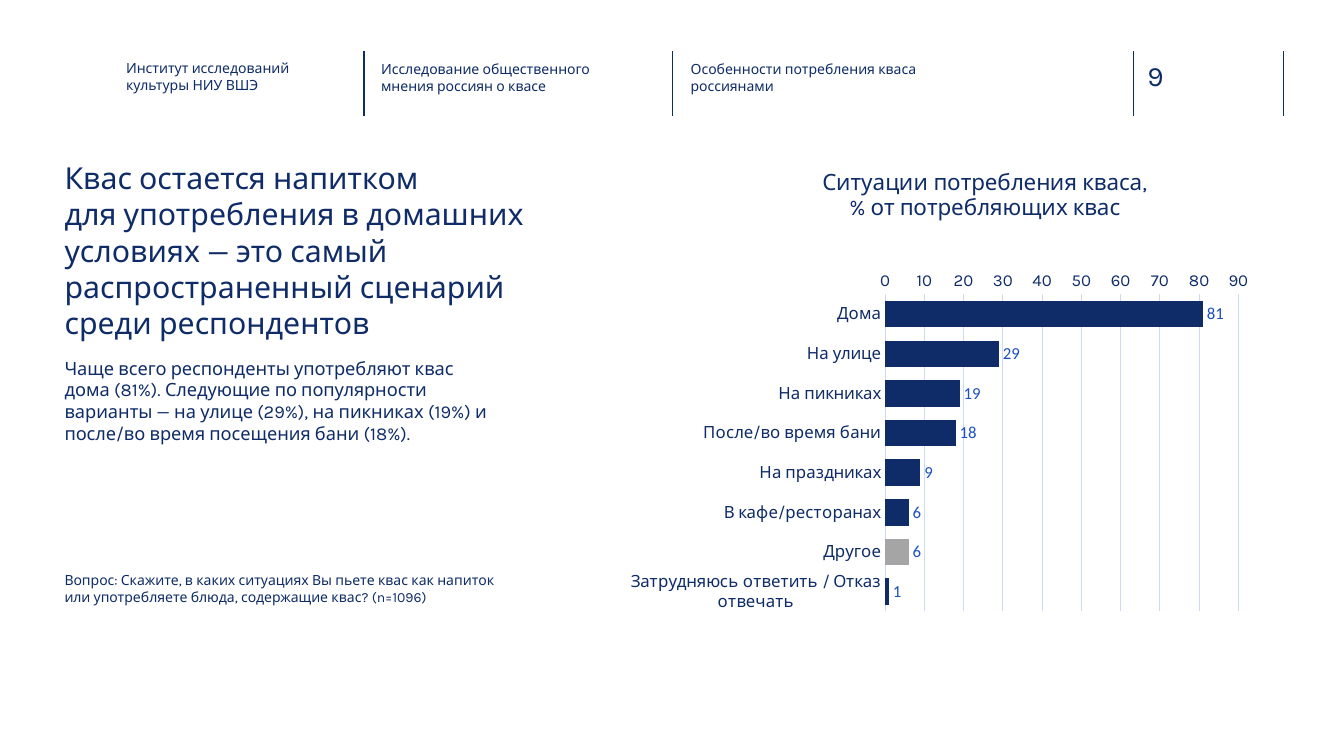
from lxml import etree
from pptx import Presentation
from pptx.chart.data import CategoryChartData
from pptx.dml.color import RGBColor
from pptx.enum.chart import XL_CHART_TYPE, XL_LABEL_POSITION, XL_TICK_MARK
from pptx.enum.shapes import MSO_CONNECTOR
from pptx.enum.text import MSO_ANCHOR, MSO_AUTO_SIZE, PP_ALIGN
from pptx.oxml.ns import qn
from pptx.util import Inches, Pt

NAVY = RGBColor(0x0F, 0x2C, 0x68)
BLUE = RGBColor(0x1B, 0x50, 0xBD)
PALE = RGBColor(0xCC, 0xDA, 0xF8)
GREY = RGBColor(0xA5, 0xA5, 0xA5)

HEADERS = [
    (1.25, 0.59, 2.08, "Институт исследований культуры НИУ ВШЭ"),
    (3.78, 0.6, 2.26, "Исследование общественного мнения россиян о квасе"),
    (6.85, 0.6, 2.26, "Особенности потребления кваса россиянами"),
]
TITLE = ("Квас остается напитком\vдля употребления в домашних условиях — "
         "это самый распространенный сценарий среди респондентов")
BODY = ("Чаще всего респонденты употребляют квас дома (81%). "
        "Следующие по популярности варианты — на улице (29%), "
        "на пикниках (19%) и после/во время посещения бани (18%).")
QUESTION = ("Вопрос: Скажите, в каких ситуациях Вы пьете квас как напиток "
            "или употребляете блюда, содержащие квас? (n=1096)")
SITUATIONS = {
    "Дома": 81,
    "На улице": 29,
    "На пикниках": 19,
    "После/во время бани": 18,
    "На праздниках": 9,
    "В кафе/ресторанах": 6,
    "Другое": 6,
    "Затрудняюсь ответить / Отказ отвечать": 1,
}


class SlideBuilder:
    font_name = "Karla"

    def __init__(self, slide):
        self.s = slide

    def set_font(self, font, size, color=NAVY, name=font_name):
        for key, value in {"name": name, "size": Pt(size), "bold": False}.items():
            setattr(font, key, value)
        font.color.rgb = color

    def fill_text(self, sp, box, text, size):
        for key, value in zip(("left", "top", "width", "height"), box):
            setattr(sp, key, Inches(value))
        tf = sp.text_frame
        frame = {"margin_left": 0, "margin_top": 0, "margin_right": 0,
                 "margin_bottom": 0, "word_wrap": True,
                 "auto_size": MSO_AUTO_SIZE.NONE,
                 "vertical_anchor": MSO_ANCHOR.TOP}
        for key, value in frame.items():
            setattr(tf, key, value)
        tf.text = text
        p = tf.paragraphs[0]
        for key, value in {"alignment": PP_ALIGN.LEFT, "space_before": Pt(0)}.items():
            setattr(p, key, value)
        for r in p.runs:
            self.set_font(r.font, size)
        return p

    def title(self, box, text, size):
        self.fill_text(self.s.shapes.title, box, text, size)

    def body(self, box, text, size):
        p = self.fill_text(self.s.placeholders[1], box, text, size)
        pPr = p._p.get_or_add_pPr()
        pPr.set("marL", "0")
        pPr.set("indent", "0")
        etree.SubElement(pPr, qn("a:buNone"))

    def text(self, box, text, size):
        sp = self.s.shapes.add_textbox(0, 0, 0, 0)
        self.fill_text(sp, box, text, size)

    def divider(self, x, top, bottom):
        line = self.s.shapes.add_connector(
            MSO_CONNECTOR.STRAIGHT, Inches(x), Inches(top), Inches(x), Inches(bottom))
        line.line.color.rgb = NAVY
        line.line.width = Pt(1)
        etree.SubElement(line._element.spPr, qn("a:effectLst"))

    def place(self, element, index, **values):
        for old in element.findall(qn("c:layout")):
            element.remove(old)
        layout = etree.Element(qn("c:layout"))
        manual = etree.SubElement(layout, qn("c:manualLayout"))
        for key, value in values.items():
            etree.SubElement(manual, qn("c:" + key)).set("val", str(value))
        element.insert(index, layout)

    def bar_chart(self, box, title, values, grey_name):
        data = CategoryChartData(number_format="#,##0")
        data.categories = list(values)
        data.add_series("Series 1", list(values.values()))
        chart = self.s.shapes.add_chart(
            XL_CHART_TYPE.BAR_CLUSTERED, *map(Inches, box), data).chart
        chart.has_legend = False
        self.set_font(chart.font, 10, name="Calibri")

        chart.has_title = True
        tf = chart.chart_title.text_frame
        tf.text = title
        for r in tf.paragraphs[0].runs:
            self.set_font(r.font, 16)
        chart.chart_title.include_in_layout = False
        self.place(chart.chart_title._element, 1,
                   xMode="edge", yMode="edge", x=0.34, y=0.01)
        self.place(chart._chartSpace.chart.plotArea, 0, layoutTarget="inner",
                   xMode="edge", yMode="edge", x=0.432, y=0.252, w=0.495, h=0.596)

        cat, val = chart.category_axis, chart.value_axis
        for axis in (cat, val):
            axis.major_tick_mark = axis.minor_tick_mark = XL_TICK_MARK.NONE
            self.set_font(axis.tick_labels.font, 12)
        cat.reverse_order = True
        val.has_major_gridlines = True
        for line in (cat.format.line, val.major_gridlines.format.line):
            line.color.rgb = PALE
            line.width = Pt(0.75)
        val.format.line.fill.background()
        for key, value in {"minimum_scale": 0, "maximum_scale": 90,
                           "major_unit": 10}.items():
            setattr(val, key, value)

        plot = chart.plots[0]
        plot.gap_width = 50
        plot.vary_by_categories = False
        series = plot.series[0]
        series.invert_if_negative = False
        grey_point = series.points[list(values).index(grey_name)]
        for part, color in ((series, NAVY), (grey_point, GREY)):
            part.format.fill.solid()
            part.format.fill.fore_color.rgb = color
        labels = series.data_labels
        for key, value in {"show_value": True, "number_format": "#,##0",
                           "number_format_is_linked": False,
                           "position": XL_LABEL_POSITION.OUTSIDE_END}.items():
            setattr(labels, key, value)
        self.set_font(labels.font, 12, BLUE, "Calibri")


def main():
    prs = Presentation()
    prs.slide_width, prs.slide_height = Inches(13.33), Inches(7.5)
    slide = SlideBuilder(prs.slides.add_slide(prs.slide_layouts[1]))
    for x in (3.61, 6.67, 11.24, 12.73):
        slide.divider(x, 0.51, 1.15)
    for left, top, width, text in HEADERS:
        slide.text((left, top, width, 0.45), text, 10)
    slide.text((11.38, 0.58, 0.73, 0.34), "9", 20)
    slide.title((0.64, 1.58, 4.73, 1.51), TITLE, 21.6)
    slide.body((0.64, 3.54, 4.3, 1.92), BODY, 13)
    slide.text((0.64, 5.67, 4.3, 0.61), QUESTION, 10)
    slide.bar_chart((5.72, 1.59, 7.08, 5.28),
                    "Ситуации потребления кваса,\v% от потребляющих квас",
                    SITUATIONS, "Другое")
    prs.save("out.pptx")


if __name__ == "__main__":
    main()
